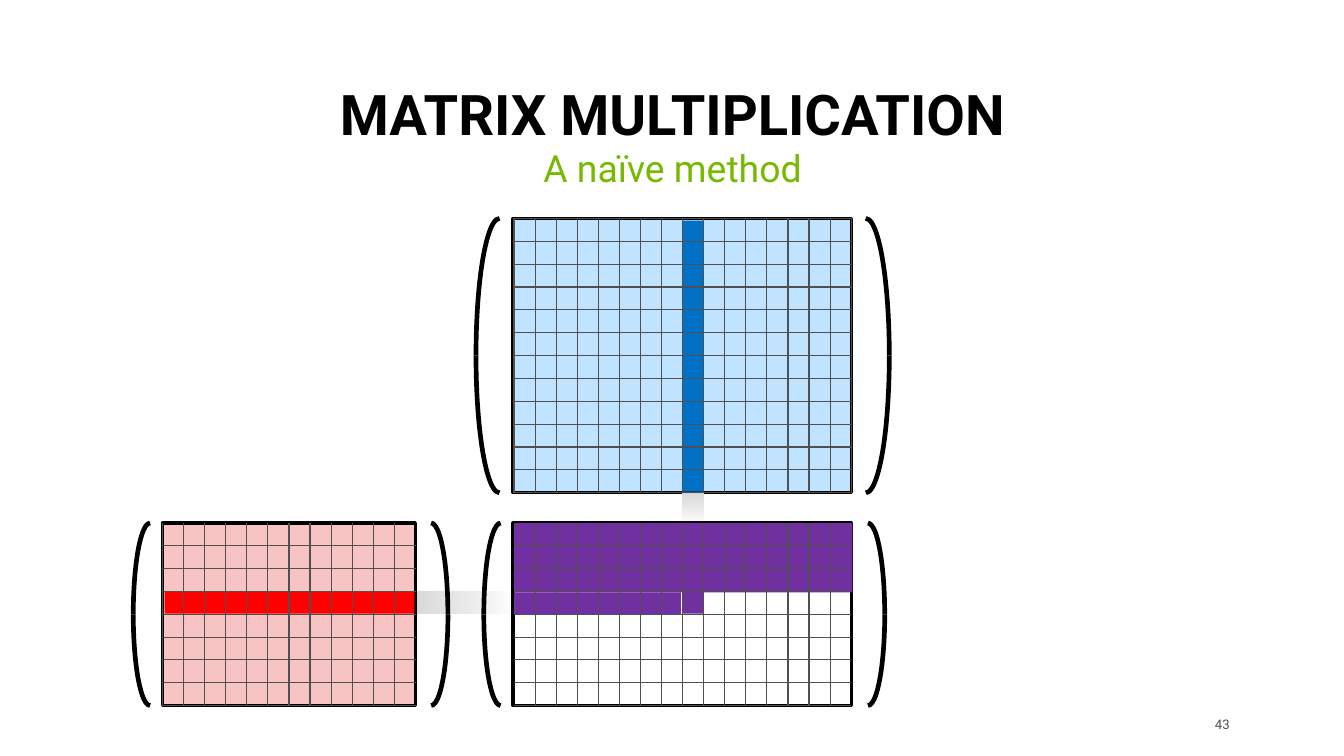
from dataclasses import dataclass

from lxml import etree
from pptx import Presentation
from pptx import util as u
from pptx.dml.color import RGBColor
from pptx.enum import shapes, text
from pptx.oxml.ns import qn


@dataclass(frozen=True)
class Theme:
    font: str = "Roboto"
    ink: str = "000000"
    accent: str = "76B900"
    muted: str = "505050"
    paper: str = "FFFFFF"
    left_matrix: str = "F8C3C3"
    left_row: str = "FF0000"
    right_matrix: str = "C0E4FF"
    right_column: str = "0071C5"
    product: str = "7030A0"
    fade_start: str = "D9D9D9"
    fade_end: str = "D1D1D1"
    title_size: float = 36
    subtitle_size: float = 24
    number_size: float = 8.5
    grid_line: float = 0.75
    frame_line: float = 2
    bracket_line: float = 3


def rgb(value):
    return RGBColor.from_string(value)


def inches(*lengths):
    return [u.Inches(length) for length in lengths]


def write(frame, words, *, size, color, font, bold=False,
          align=text.PP_ALIGN.CENTER, spacing=None):
    paragraph = frame.paragraphs[0]
    paragraph.alignment = align
    paragraph.line_spacing = spacing
    run = paragraph.add_run()
    run.text = words
    run.font.name = font
    run.font.size = u.Pt(size)
    run.font.bold = bold
    run.font.color.rgb = rgb(color)


class Board:
    def __init__(self, slide, theme):
        self.slide = slide
        self.theme = theme

    def label(self, box, words, *, anchor=text.MSO_ANCHOR.TOP, inset=True, **style):
        frame = self.slide.shapes.add_textbox(*inches(*box)).text_frame
        frame.word_wrap = True
        frame.vertical_anchor = anchor
        if not inset:
            frame.margin_left = frame.margin_right = 0
            frame.margin_top = frame.margin_bottom = 0
        write(frame, words, font=self.theme.font, **style)

    def block(self, box, color, framed=False):
        rect = self.slide.shapes.add_shape(shapes.MSO_SHAPE.RECTANGLE, *inches(*box))
        rect.shadow.inherit = False
        rect.fill.solid()
        rect.fill.fore_color.rgb = rgb(color)
        if framed:
            rect.line.color.rgb = rgb(self.theme.ink)
            rect.line.width = u.Pt(self.theme.frame_line)
        else:
            rect.line.fill.background()
        return rect

    def fade(self, box, angle):
        rect = self.block(box, self.theme.fade_start)
        rect.fill.gradient()
        rect.fill.gradient_angle = angle
        ends = (self.theme.fade_start, self.theme.fade_end)
        for place, (stop, color) in enumerate(zip(rect.fill.gradient_stops, ends)):
            stop.position = place
            stop.color.rgb = rgb(color)
        last_color = rect._element.spPr.findall(".//" + qn("a:srgbClr"))[-1]
        etree.SubElement(last_color, qn("a:alpha"), val="0")

    def rule(self, x1, y1, x2, y2):
        line = self.slide.shapes.add_connector(
            shapes.MSO_CONNECTOR.STRAIGHT, *inches(x1, y1, x2, y2))
        line.line.color.rgb = rgb(self.theme.muted)
        line.line.width = u.Pt(self.theme.grid_line)
        etree.SubElement(line._element.spPr, qn("a:effectLst"))

    def grid(self, box, columns, rows, column_lines, row_lines):
        left, top, width, height = box
        for column in column_lines:
            x = left + width * column / columns
            self.rule(x, top, x, top + height)
        for row in row_lines:
            y = top + height * row / rows
            self.rule(left + width, y, left, y)

    def bracket(self, box, opening):
        halves = self.slide.shapes.add_group_shape().shapes
        for start in (90, 180) if opening else (270, 0):
            arc = halves.add_shape(shapes.MSO_SHAPE.ARC, *inches(*box))
            arc.shadow.inherit = False
            arc.adjustments[0] = start * 0.6
            arc.adjustments[1] = (start + 90) % 360 * 0.6
            arc.fill.background()
            arc.line.color.rgb = rgb(self.theme.ink)
            arc.line.width = u.Pt(self.theme.bracket_line)


def main():
    deck = Presentation()
    deck.slide_width, deck.slide_height = inches(12, 6.75)
    theme = Theme()
    board = Board(deck.slides.add_slide(deck.slide_layouts[6]), theme)

    upper_top, upper_height = 1.95, 2.45
    lower_top, lower_height = 4.67, 1.63
    left_box = (1.45, lower_top, 2.26, lower_height)
    right_box = (4.59, upper_top, 3.01, upper_height)
    product_box = (4.59, lower_top, 3.01, lower_height)

    board.label((10.63, 6.38, 0.35, 0.18), "43", anchor=text.MSO_ANCHOR.MIDDLE,
                inset=False, size=theme.number_size, color=theme.muted,
                align=text.PP_ALIGN.RIGHT)

    board.block((4.58, lower_top, 3.02, lower_height), theme.paper, framed=True)
    board.block((4.59, lower_top, 3.02, 0.62), theme.product)
    board.block((6.09, 5.28, 0.19, 0.2), theme.product)
    board.fade((3.7, 5.28, 0.89, 0.2), 0)
    board.block(left_box, theme.left_matrix, framed=True)
    board.block((4.59, 5.29, 1.49, 0.2), theme.product)
    board.block((4.58, upper_top, 3.02, upper_height), theme.right_matrix, framed=True)
    board.block((1.47, 5.28, 2.23, 0.2), theme.left_row)
    board.block((6.09, 1.97, 0.19, 2.42), theme.right_column)

    board.label((0.55, 0.72, 10.91, 0.65), "MATRIX MULTIPLICATION",
                anchor=text.MSO_ANCHOR.BOTTOM, size=theme.title_size,
                color=theme.ink, bold=True, spacing=0.9)
    board.label((0.55, 1.29, 10.91, 0.57), "A naïve method",
                size=theme.subtitle_size, color=theme.accent, spacing=0.9)

    board.grid(right_box, 16, 12, range(17), range(13))
    board.grid(product_box, 16, 8, range(1, 16), range(1, 9))
    board.fade((6.09, 4.41, 0.19, 0.25), 270)

    for left, opening in ((4.25, True), (7.52, False)):
        board.bracket((left, upper_top, 0.42, upper_height), opening)
    for left, opening in ((1.19, True), (3.7, False), (4.32, True), (7.6, False)):
        board.bracket((left, lower_top, 0.3, lower_height), opening)

    board.grid(left_box, 12, 8, range(12), range(1, 9))

    deck.save("out.pptx")


if __name__ == "__main__":
    main()
